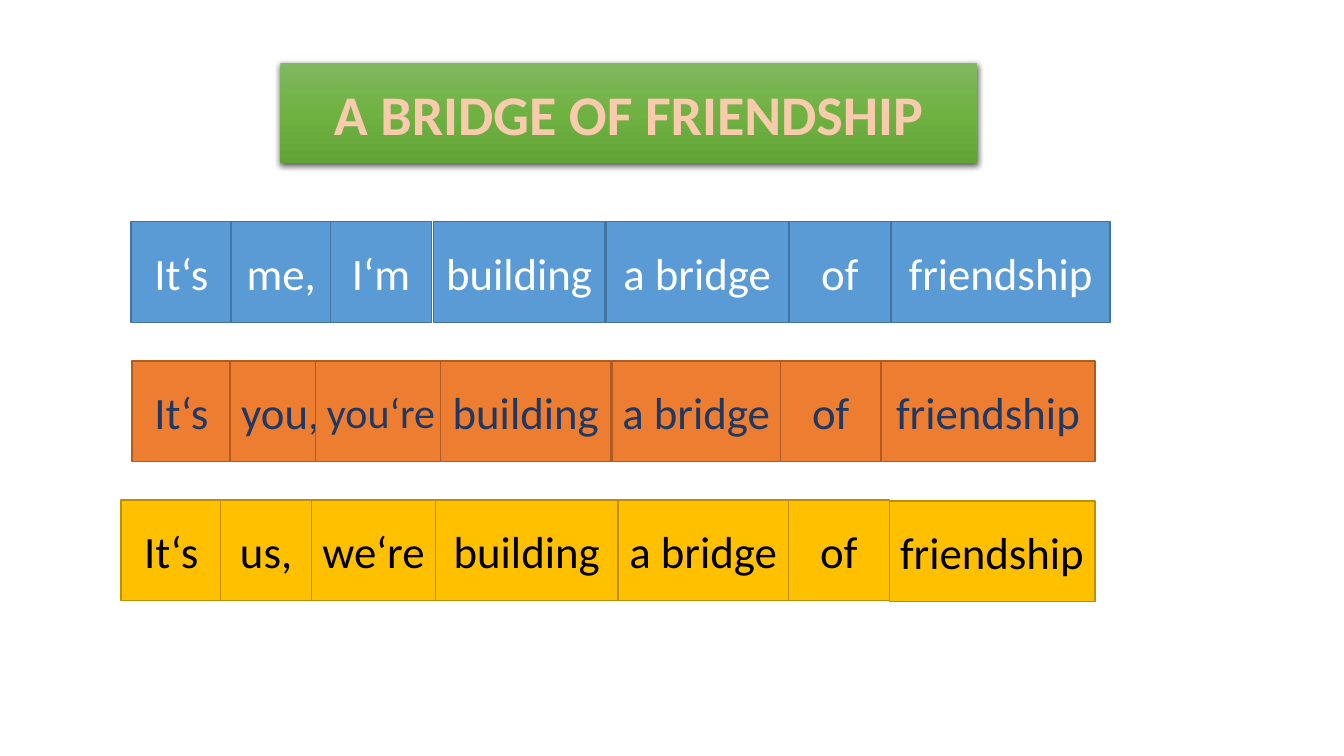
from lxml import etree
from pptx import Presentation
from pptx.dml.color import RGBColor
from pptx.enum.shapes import MSO_SHAPE as SHAPE
from pptx.enum.text import MSO_ANCHOR as ANCHOR, MSO_AUTO_SIZE as AUTO_SIZE, PP_ALIGN as ALIGN
from pptx.oxml import parse_xml
from pptx.util import Inches, Pt

NS = 'xmlns:a="http://schemas.openxmlformats.org/drawingml/2006/main"'
TITLE_ONLY = 5
WORD_HEIGHT = 1

# Each word: text, left, width
ME_WORDS = [("It‘s", 1.3, 1), ("me,", 2.29, 1), ("I‘m", 3.28, 1), ("building", 4.3, 1.7),
            ("a bridge", 6.01, 1.81), ("of", 7.83, 1), ("friendship", 8.84, 2.17)]
YOU_WORDS = [("It‘s", 1.31, 0.98), ("you,", 2.28, 1), ("you‘re", 3.13, 1.3), ("building", 4.37, 1.69),
             ("a bridge", 6.07, 1.67), ("of", 7.74, 1), ("friendship", 8.74, 2.12)]
US_WORDS = [("It‘s", 1.2, 1), ("us,", 2.19, 0.9), ("we‘re", 3.09, 1.23), ("building", 4.32, 1.81),
            ("a bridge", 6.13, 1.69), ("of", 7.82, 1), ("friendship", 8.82, 2.04)]

# Each row: top, fill, line, text colour, words
ROWS = [(2.2, "5B9BD5", "43739E", "FFFFFF", ME_WORDS),
        (3.58, "ED7D31", "AF5C24", "203864", YOU_WORDS),
        (4.96, "FFC000", "BD8E00", "000000", US_WORDS)]
SMALLER_SIZES = {"you‘re": 30}
TOP_SHIFTS = {("friendship", 4.96): 0.01}


def rgb(color):
    return RGBColor.from_string(color)


def write_centred(sp, text, size, color, bold=False):
    tf = sp.text_frame
    tf.word_wrap = True
    tf.auto_size = AUTO_SIZE.NONE
    tf.vertical_anchor = ANCHOR.MIDDLE
    p = tf.paragraphs[0]
    p.alignment = ALIGN.CENTER
    r = p.add_run()
    r.text = text
    r.font.name = "Calibri"
    r.font.size = Pt(size)
    r.font.bold = bold
    r.font.color.rgb = rgb(color)
    return r


def add_title(s, text):
    sp = s.shapes.title
    sp.left, sp.top, sp.width, sp.height = map(Inches, (2.78, 0.62, 6.91, 1))
    stops = "".join(f'<a:gs pos="{pos}"><a:srgbClr val="{color}"/></a:gs>'
                    for pos, color in [(0, "81B861"), (50000, "6FB242"), (100000, "62A336")])
    for xml in (
        f'<a:prstGeom {NS} prst="roundRect"><a:avLst/></a:prstGeom>',
        f'<a:gradFill {NS} rotWithShape="1"><a:gsLst>{stops}</a:gsLst>'
        '<a:lin ang="5400000" scaled="0"/></a:gradFill>',
        f'<a:ln {NS}><a:noFill/></a:ln>',
        f'<a:effectLst {NS}><a:outerShdw blurRad="{Pt(4.5)}" dist="{Pt(1.5)}" dir="5400000" '
        'algn="ctr" rotWithShape="0"><a:srgbClr val="000000"><a:alpha val="63000"/></a:srgbClr>'
        '</a:outerShdw></a:effectLst>',
    ):
        sp.element.spPr.append(parse_xml(xml))
    r = write_centred(sp, text, 40, "F8CBAD", bold=True)
    outline = etree.fromstring(f'<a:ln {NS} w="{Pt(1.75)}"><a:solidFill>'
                               '<a:srgbClr val="ED7D31"/></a:solidFill></a:ln>')
    r.font._element.insert(0, outline)


def add_word(s, text, left, top, width, fill, line, color):
    sp = s.shapes.add_shape(SHAPE.RECTANGLE, Inches(left), Inches(top),
                            Inches(width), Inches(WORD_HEIGHT))
    sp.shadow.inherit = False
    sp.fill.solid()
    sp.fill.fore_color.rgb = rgb(fill)
    sp.line.color.rgb = rgb(line)
    sp.line.width = Pt(1)
    write_centred(sp, text, SMALLER_SIZES.get(text, 32), color)


def main():
    prs = Presentation()
    prs.slide_width, prs.slide_height = Inches(13.33), Inches(7.5)
    s = prs.slides.add_slide(prs.slide_layouts[TITLE_ONLY])
    add_title(s, "A BRIDGE OF FRIENDSHIP")
    for top, fill, line, color, words in ROWS:
        for text, left, width in words:
            shift = TOP_SHIFTS.get((text, top), 0)
            add_word(s, text, left, top + shift, width, fill, line, color)
    prs.save("out.pptx")


if __name__ == "__main__":
    main()
